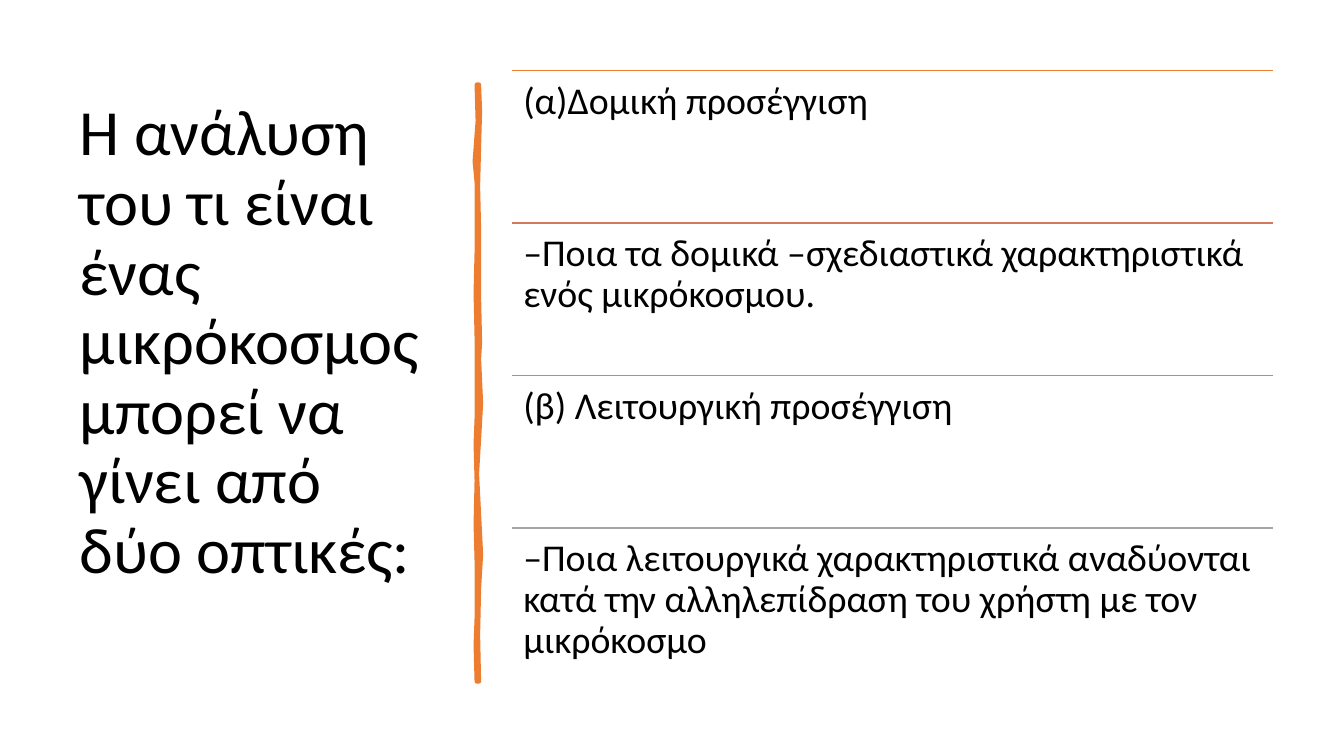
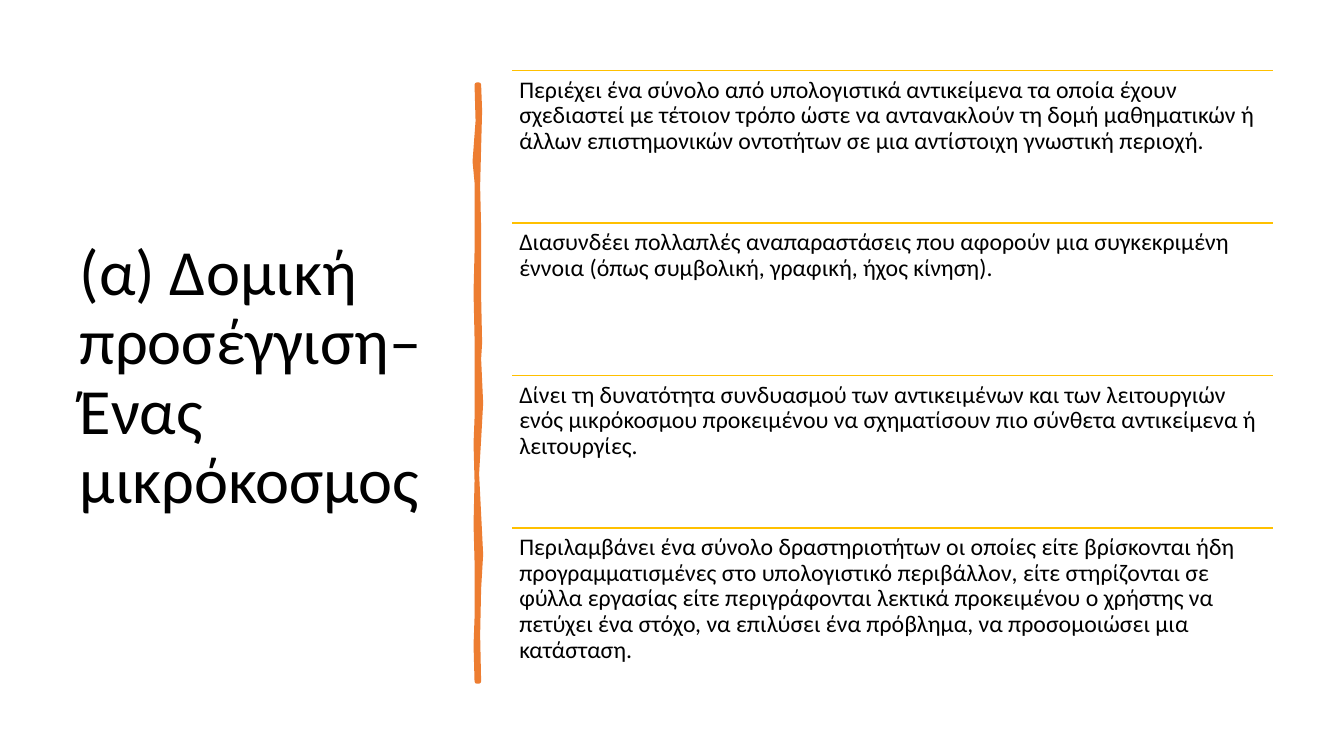
from pptx import Presentation
from pptx.dml.color import RGBColor
from pptx.enum.shapes import MSO_CONNECTOR
from pptx.enum.text import MSO_ANCHOR, MSO_AUTO_SIZE, PP_ALIGN
from pptx.oxml.ns import qn
from pptx.util import Inches, Pt
from lxml.etree import SubElement

ORANGE, GOLD, BLACK = "ED7D31", "FFC000", "000000"
FONT = "Calibri"
LEFT, TOP, WIDE, TALL = 5.08, 0.7, 7.55, 6.05

RIGHT_EDGE = [
    (4.75, 0.84), (4.76, 1.1), (4.75, 1.46), (4.74, 1.85), (4.75, 2.26),
    (4.75, 2.94), (4.76, 3.4), (4.75, 3.56), (4.77, 4), (4.75, 4.36),
    (4.73, 4.7), (4.75, 5.1), (4.77, 5.5), (4.75, 5.84), (4.74, 6.3),
    (4.75, 6.76),
]
LEFT_EDGE = [
    (4.73, 6.76), (4.72, 6.4), (4.73, 6.13), (4.73, 5.57), (4.72, 5.2),
    (4.73, 4.77), (4.72, 4.4), (4.73, 4.15), (4.73, 3.35), (4.72, 2.9),
    (4.73, 2.5), (4.73, 1.81), (4.71, 1.6), (4.74, 1.2), (4.73, 0.84),
]

PAGES = [
    dict(
        title="Η ανάλυση του τι είναι ένας μικρόκοσμος μπορεί να γίνει από δύο οπτικές:",
        foot=0.74, size=27, pad=0.11,
        rows=[
            ("(α)Δομική προσέγγιση", ORANGE),
            ("–Ποια τα δομικά –σχεδιαστικά χαρακτηριστικά ενός μικρόκοσμου.", "D17B5C"),
            ("(β) Λειτουργική προσέγγιση", "B98A82"),
            ("–Ποια λειτουργικά χαρακτηριστικά αναδύονται κατά την αλληλεπίδραση "
             "του χρήστη με τον μικρόκοσμο", "A5A5A5"),
        ],
    ),
    dict(
        title="(α) Δομική προσέγγιση–Ένας μικρόκοσμος",
        foot=0.05, size=17, pad=0.07,
        rows=[
            ("Περιέχει ένα σύνολο από υπολογιστικά αντικείμενα τα οποία έχουν "
             "σχεδιαστεί με τέτοιον τρόπο ώστε να αντανακλούν τη δομή μαθηματικών "
             "ή άλλων επιστημονικών οντοτήτων σε μια αντίστοιχη γνωστική περιοχή.", GOLD),
            ("Διασυνδέει πολλαπλές αναπαραστάσεις που αφορούν μια συγκεκριμένη "
             "έννοια (όπως συμβολική, γραφική, ήχος κίνηση).", GOLD),
            ("Δίνει τη δυνατότητα συνδυασμού των αντικειμένων και των λειτουργιών "
             "ενός μικρόκοσμου προκειμένου να σχηματίσουν πιο σύνθετα αντικείμενα "
             "ή λειτουργίες.", GOLD),
            ("Περιλαμβάνει ένα σύνολο δραστηριοτήτων οι οποίες είτε βρίσκονται ήδη "
             "προγραμματισμένες στο υπολογιστικό περιβάλλον, είτε στηρίζονται σε "
             "φύλλα εργασίας είτε περιγράφονται λεκτικά προκειμένου ο χρήστης να "
             "πετύχει ένα στόχο, να επιλύσει ένα πρόβλημα, να προσομοιώσει μια "
             "κατάσταση.", GOLD),
        ],
    ),
]


def paint(target, color):
    target.solid()
    target.fore_color.rgb = RGBColor.from_string(color)


def write(shape, text, size, pads, anchor=MSO_ANCHOR.TOP):
    frame = shape.text_frame
    frame.word_wrap = True
    frame.auto_size = MSO_AUTO_SIZE.NONE
    frame.vertical_anchor = anchor
    (frame.margin_left, frame.margin_top,
     frame.margin_right, frame.margin_bottom) = map(Inches, pads)
    para = frame.paragraphs[0]
    para.alignment = PP_ALIGN.LEFT
    para.line_spacing = 0.9
    run = para.add_run()
    run.text = text
    run.font.name = FONT
    run.font.size = Pt(size)
    paint(run.font.fill, BLACK)


class Deck:
    def __init__(self):
        self.prs = Presentation()
        self.prs.slide_width = Inches(13.33)
        self.prs.slide_height = Inches(7.5)

    def page(self):
        self.slide = self.prs.slides.add_slide(self.prs.slide_layouts[5])
        self.shapes = self.slide.shapes

    def title(self, text, foot):
        box = self.shapes.title
        box.left, box.top, box.width, box.height = map(Inches, (0.69, 0.7, 3.74, 6.11))
        write(box, text, size=46, pads=(0.1, 0.05, 0.1, foot), anchor=MSO_ANCHOR.MIDDLE)

    def stroke(self):
        spots = [(Inches(x), Inches(y)) for x, y in RIGHT_EDGE + LEFT_EDGE]
        form = self.shapes.build_freeform(*spots[0])
        form.add_line_segments(spots[1:], close=True)
        shape = form.convert_to_shape()
        shape.shadow.inherit = False
        paint(shape.fill, ORANGE)
        paint(shape.line.fill, ORANGE)
        shape.line.width = Pt(3.25)

    def rule(self, top, color):
        line = self.shapes.add_connector(
            MSO_CONNECTOR.STRAIGHT, Inches(LEFT), Inches(top),
            Inches(LEFT + WIDE), Inches(top))
        paint(line.line.fill, color)
        line.line.width = Pt(1)
        SubElement(line._element.spPr, qn("a:effectLst"))

    def rows(self, rows, size, pad):
        step = TALL / len(rows)
        for i, (text, color) in enumerate(rows):
            top = TOP + i * step
            self.rule(top, color)
            box = self.shapes.add_textbox(*map(Inches, (LEFT, top, WIDE, step)))
            write(box, text, size=size, pads=[pad] * 4)


def main():
    deck = Deck()
    for page in PAGES:
        deck.page()
        deck.title(page["title"], page["foot"])
        deck.stroke()
        deck.rows(page["rows"], page["size"], page["pad"])
    deck.prs.save("out.pptx")


if __name__ == "__main__":
    main()
